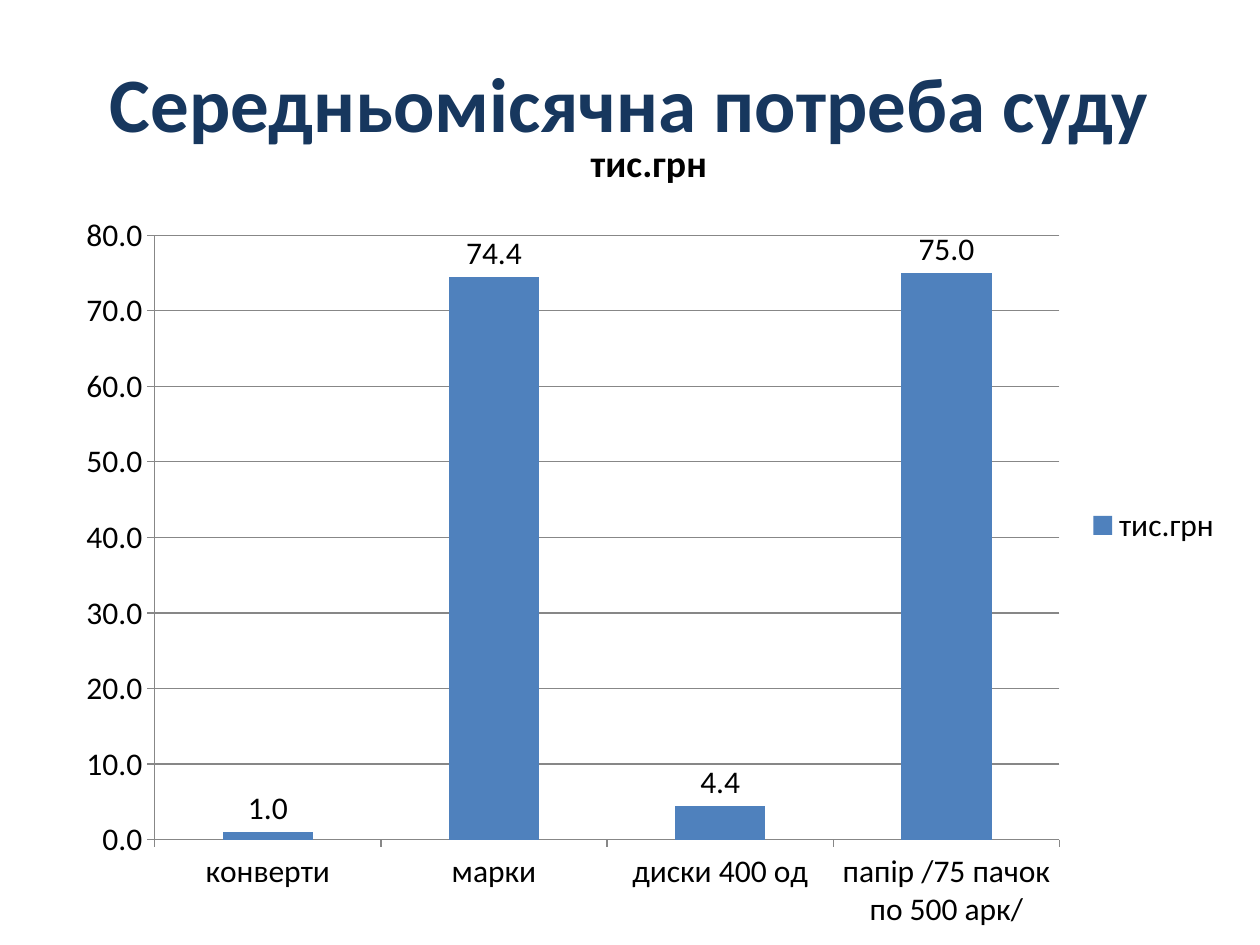
from pptx import Presentation
from pptx.chart.data import CategoryChartData
from pptx.dml.color import RGBColor
from pptx.enum.chart import XL_CHART_TYPE, XL_LABEL_POSITION, XL_LEGEND_POSITION, XL_TICK_MARK
from pptx.enum.text import MSO_ANCHOR, PP_ALIGN
from pptx.util import Pt

COLORS = {"heading": "17375E", "bars": "4F81BD", "text": "000000", "lines": "878787"}
UNIT = "тис.грн"
NEEDS = {"конверти": 1, "марки": 74.4, "диски 400 од": 4.4, "папір /75 пачок по 500 арк/": 75}


def color(key):
    """Return the palette colour for a key."""
    return RGBColor.from_string(COLORS[key])


def apply_format(target, values):
    """Set each named attribute on the target."""
    for attribute, value in values.items():
        setattr(target, attribute, value)


def style_font(font, size, key="text", bold=False):
    """Give a font its face, size, weight and colour."""
    apply_format(font, {"name": "Calibri", "size": Pt(size), "bold": bold})
    font.color.rgb = color(key)


def style_line(line):
    """Draw a thin grey chart line."""
    line.color.rgb = color("lines")
    line.width = Pt(0.75)


def add_heading(slide, text):
    """Add the centred slide heading."""
    frame = slide.shapes.add_textbox(Pt(36), Pt(21.6), Pt(648), Pt(72.7)).text_frame
    apply_format(frame, {"word_wrap": True, "vertical_anchor": MSO_ANCHOR.MIDDLE})
    paragraph = frame.paragraphs[0]
    apply_format(paragraph, {"text": text, "alignment": PP_ALIGN.CENTER})
    style_font(paragraph.runs[0].font, 44, "heading", True)


def style_axes(chart):
    """Format the category and value axes."""
    for axis in (chart.category_axis, chart.value_axis):
        apply_format(axis, {"major_tick_mark": XL_TICK_MARK.OUTSIDE,
                            "minor_tick_mark": XL_TICK_MARK.NONE})
        style_line(axis.format.line)
    values = chart.value_axis
    apply_format(values, {"minimum_scale": 0, "maximum_scale": 80, "major_unit": 10,
                          "has_major_gridlines": True})
    apply_format(values.tick_labels, {"number_format": "0.0", "number_format_is_linked": False})
    style_line(values.major_gridlines.format.line)


def style_bars(plot):
    """Format the columns and their value labels."""
    apply_format(plot, {"gap_width": 150, "vary_by_categories": False})
    bars = plot.series[0]
    bars.invert_if_negative = False
    bars.format.fill.solid()
    bars.format.fill.fore_color.rgb = color("bars")
    apply_format(bars.data_labels, {"show_value": True, "number_format": "0.0",
                                    "number_format_is_linked": False,
                                    "position": XL_LABEL_POSITION.OUTSIDE_END})


def add_needs_chart(slide):
    """Add the column chart of monthly needs."""
    needs = CategoryChartData(number_format="0.0")
    needs.categories = list(NEEDS)
    needs.add_series(UNIT, NEEDS.values())
    chart = slide.shapes.add_chart(XL_CHART_TYPE.COLUMN_CLUSTERED, Pt(36), Pt(60.5),
                                   Pt(669.6), Pt(479.5), needs).chart
    style_font(chart.font, 18)
    apply_format(chart, {"has_title": True, "has_legend": True})
    unit_title = chart.chart_title.text_frame
    unit_title.text = UNIT
    style_font(unit_title.paragraphs[0].runs[0].font, 21.6, bold=True)
    apply_format(chart.legend, {"position": XL_LEGEND_POSITION.RIGHT, "include_in_layout": False})
    style_axes(chart)
    style_bars(chart.plots[0])


def main():
    """Build and save the slide."""
    presentation = Presentation()
    apply_format(presentation, {"slide_width": Pt(720), "slide_height": Pt(540)})
    slide = presentation.slides.add_slide(presentation.slide_layouts[6])
    add_heading(slide, "Середньомісячна потреба суду")
    add_needs_chart(slide)
    presentation.save("out.pptx")


if __name__ == "__main__":
    main()
